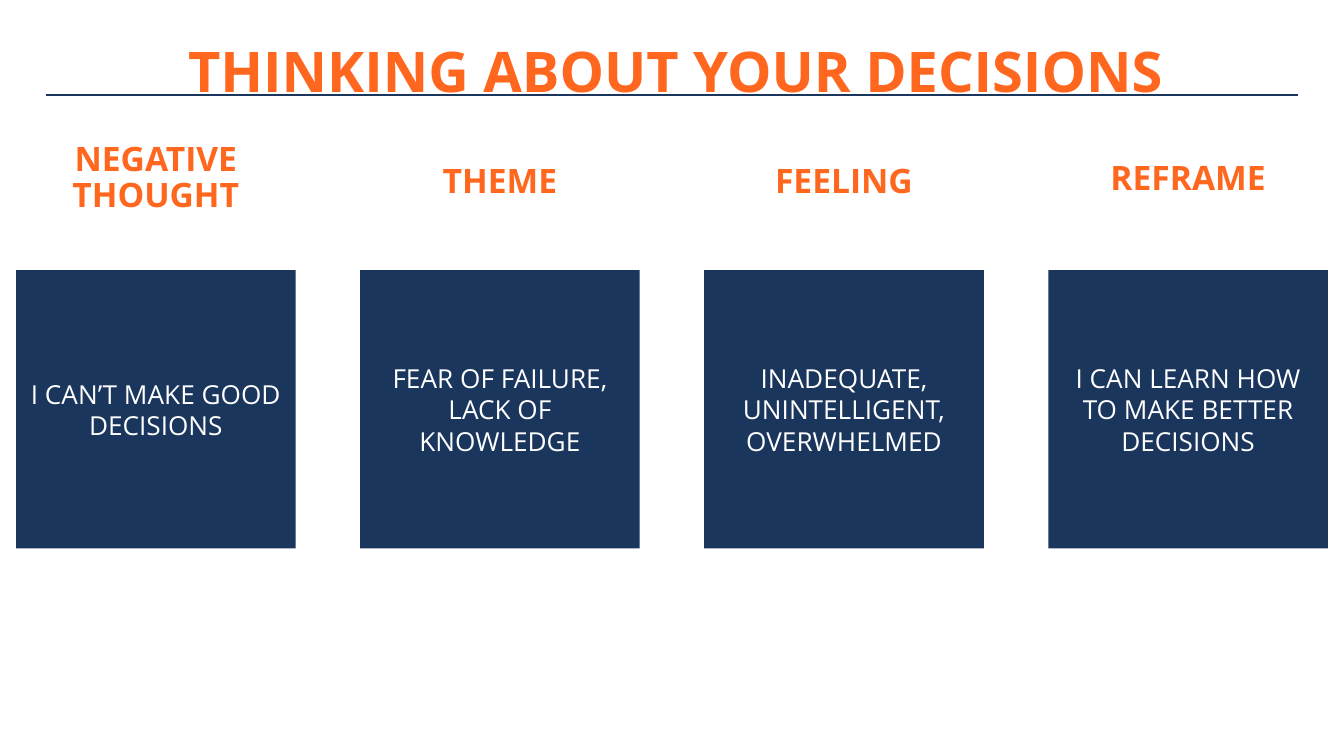
from lxml import etree
from pptx import Presentation
from pptx.dml.color import RGBColor
from pptx.enum import shapes, text
from pptx.oxml import ns
from pptx.util import Pt

HEADING = "THINKING ABOUT YOUR DECISIONS"
COLUMNS = [
    ("NEGATIVE THOUGHT", "I CAN’T MAKE GOOD DECISIONS", 76.3, text.MSO_ANCHOR.BOTTOM),
    ("THEME", "FEAR OF FAILURE, LACK OF KNOWLEDGE", 74.9, text.MSO_ANCHOR.MIDDLE),
    ("FEELING", "INADEQUATE, UNINTELLIGENT, OVERWHELMED", 74.9, text.MSO_ANCHOR.MIDDLE),
    ("REFRAME", "I CAN LEARN HOW TO MAKE BETTER DECISIONS", 73.4, text.MSO_ANCHOR.MIDDLE),
]
FONT = "Open Sans"
ORANGE, NAVY, WHITE = "FF671F", "1B365D", "FFFFFF"
WIDTH, HEIGHT = 720, 405
MARGIN = 8.6
CARD_TOP, CARD_WIDTH, CARD_HEIGHT = 144.8, 149.8, 149
LABEL_WIDTH, LABEL_HEIGHT = 144, 46
PITCH = (WIDTH - 2 * MARGIN - CARD_WIDTH) / (len(COLUMNS) - 1)
RULE_LEFT, RULE_TOP = 24.6, 51


def color(code):
    return RGBColor.from_string(code)


def write(shape, words, size, code, bold=False, anchor=text.MSO_ANCHOR.MIDDLE, spacing=None):
    frame = shape.text_frame
    frame.word_wrap = True
    frame.vertical_anchor = anchor
    frame.margin_left = frame.margin_right = Pt(7.2)
    frame.margin_top = frame.margin_bottom = Pt(7.2)
    paragraph = frame.paragraphs[0]
    paragraph.alignment = text.PP_ALIGN.CENTER
    paragraph.line_spacing = spacing
    run = paragraph.add_run()
    run.text = words
    run.font.name = FONT
    run.font.size = Pt(size)
    run.font.bold = bold
    run.font.color.rgb = color(code)


prs = Presentation()
prs.slide_width, prs.slide_height = Pt(WIDTH), Pt(HEIGHT)
slide = prs.slides.add_slide(prs.slide_layouts[6])

heading = slide.shapes.add_textbox(Pt(2), Pt(2), Pt(WIDTH), Pt(71.3))
write(heading, HEADING, 30, ORANGE, bold=True)

rule = slide.shapes.add_connector(
    shapes.MSO_CONNECTOR.STRAIGHT,
    Pt(RULE_LEFT), Pt(RULE_TOP), Pt(WIDTH - RULE_LEFT), Pt(RULE_TOP))
rule.line.color.rgb = color(NAVY)
rule.line.width = Pt(0.75)
etree.SubElement(rule._element.spPr, ns.qn("a:effectLst"))

for index, (label_words, card_words, label_top, anchor) in enumerate(COLUMNS):
    left = MARGIN + index * PITCH
    label_left = left + (CARD_WIDTH - LABEL_WIDTH) / 2
    label = slide.shapes.add_textbox(
        Pt(label_left), Pt(label_top), Pt(LABEL_WIDTH), Pt(LABEL_HEIGHT))
    write(label, label_words, 18, ORANGE, bold=True, anchor=anchor, spacing=0.9)

    card = slide.shapes.add_shape(
        shapes.MSO_SHAPE.RECTANGLE,
        Pt(left), Pt(CARD_TOP), Pt(CARD_WIDTH), Pt(CARD_HEIGHT))
    card.shadow.inherit = False
    card.fill.solid()
    card.fill.fore_color.rgb = color(NAVY)
    card.line.fill.background()
    write(card, card_words, 14, WHITE)

prs.save("out.pptx")
